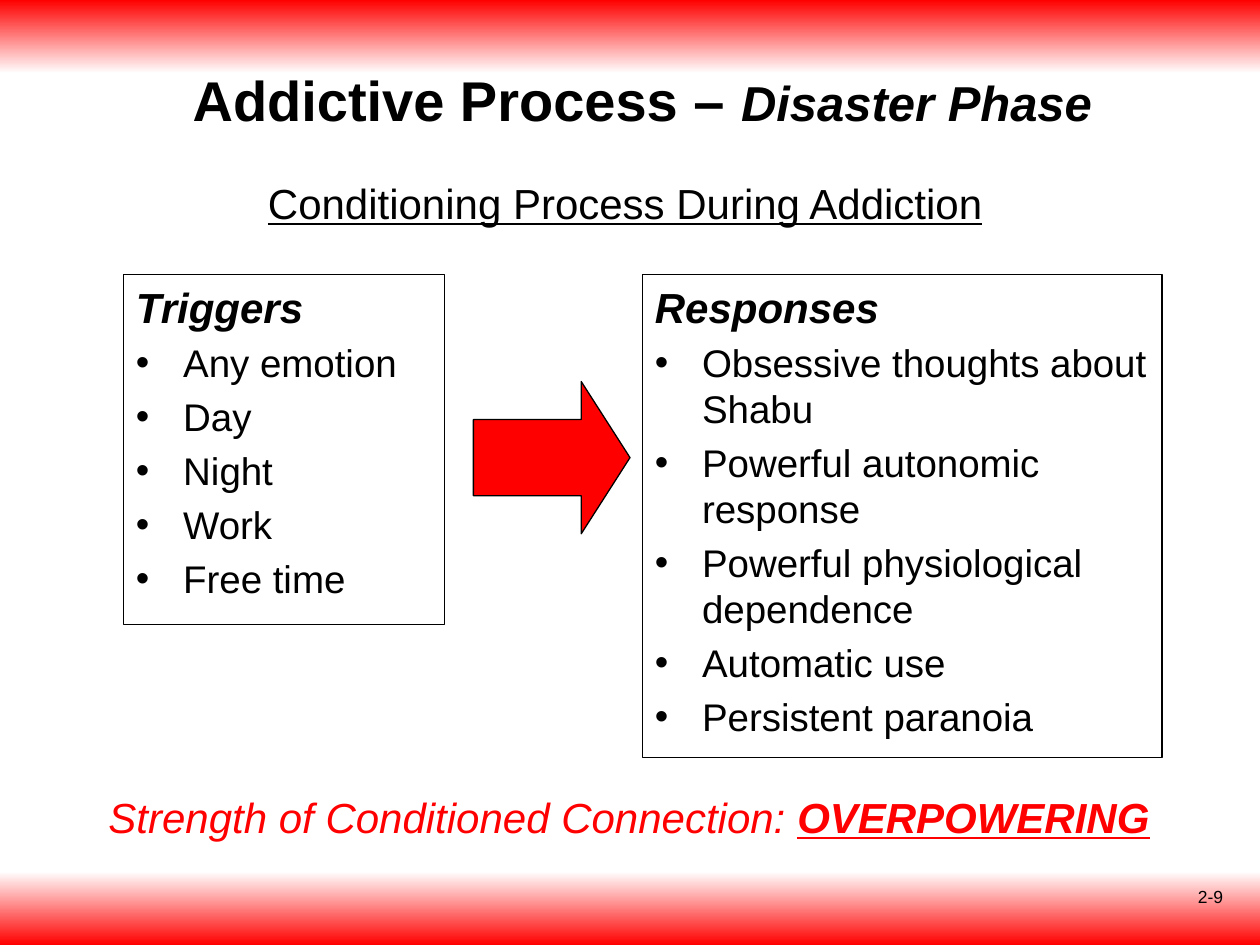
"""Build the Disaster Phase slide of the addictive process deck."""
from lxml.etree import SubElement
from pptx import Presentation
from pptx.dml.color import RGBColor
from pptx.enum.shapes import MSO_SHAPE
from pptx.enum.text import MSO_ANCHOR, MSO_AUTO_SIZE, PP_ALIGN
from pptx.oxml.ns import qn
from pptx.util import Pt

RED = RGBColor(0xFF, 0x00, 0x00)
BLACK = RGBColor(0x00, 0x00, 0x00)
WHITE = RGBColor(0xFF, 0xFF, 0xFF)


class SlideBuilder:
    """Hold the text style and the current slide."""

    font = {"name": "Arial", "size": 24, "bold": False, "italic": False,
            "underline": False, "color": BLACK}
    hanging = 27

    def __init__(self, deck):
        self.slide = deck.slides.add_slide(deck.slide_layouts[3])
        self.title_box, self.left_box, self.right_box = self.slide.placeholders

    def place(self, box, bounds):
        names = ("left", "top", "width", "height")
        for name, value in zip(names, bounds):
            setattr(box, name, Pt(value))

    def span(self, para, text, **changes):
        style = {**self.font, **changes}
        span = para.add_run()
        span.text = text
        span.font.color.rgb = style.pop("color")
        style["size"] = Pt(style["size"])
        for name, value in style.items():
            setattr(span.font, name, value)

    def outline(self, box):
        box.line.color.rgb = BLACK
        box.line.width = Pt(0.75)

    def band(self, top, colors):
        box = self.slide.shapes.add_shape(
            MSO_SHAPE.RECTANGLE, Pt(0), Pt(top), Pt(720), Pt(42))
        box.shadow.inherit = False
        box.line.fill.background()
        box.fill.gradient()
        box.fill.gradient_angle = 270
        for stop, color in zip(box.fill.gradient_stops, colors):
            stop.color.rgb = color

    def arrow(self, bounds):
        box = self.slide.shapes.add_shape(MSO_SHAPE.RIGHT_ARROW, *map(Pt, bounds))
        box.shadow.inherit = False
        box.adjustments[0], box.adjustments[1] = 0.5, 0.32
        box.fill.solid()
        box.fill.fore_color.rgb = RED
        self.outline(box)

    def title(self, bounds, spans):
        self.place(self.title_box, bounds)
        self.fill_text(self.title_box, spans, PP_ALIGN.CENTER)

    def text(self, bounds, spans, alignment=PP_ALIGN.LEFT, **frame):
        box = self.slide.shapes.add_textbox(*map(Pt, bounds))
        self.fill_text(box, spans, alignment, **frame)

    def fill_text(self, box, spans, alignment, **frame):
        settings = {"word_wrap": True, "auto_size": MSO_AUTO_SIZE.NONE, **frame}
        for name, value in settings.items():
            setattr(box.text_frame, name, value)
        para = box.text_frame.paragraphs[0]
        para.alignment = alignment
        for text, changes in spans:
            self.span(para, text, **changes)

    def panel(self, box, bounds, heading, items):
        self.place(box, bounds)
        self.outline(box)
        self.fill_text(box, [(heading, {"bold": True, "italic": True})], PP_ALIGN.LEFT)
        self.bullet(box.text_frame.paragraphs[0], 0, "buNone")
        for item in items:
            para = box.text_frame.add_paragraph()
            self.bullet(para, self.hanging, "buChar", char="•")
            self.span(para, item, size=22)

    def bullet(self, para, indent, kind, **attributes):
        properties = para._p.get_or_add_pPr()
        properties.set("marL", str(Pt(indent)))
        properties.set("indent", str(-Pt(indent)))
        SubElement(properties, qn(f"a:{kind}"), **attributes)


def main():
    deck = Presentation()
    deck.slide_width, deck.slide_height = Pt(720), Pt(540)
    page = SlideBuilder(deck)
    page.band(498, (WHITE, RED))
    page.band(0, (RED, WHITE))
    page.title((51, 31, 632, 51), [
        ("Addictive Process – ", {"size": 32, "bold": True}),
        ("Disaster Phase", {"size": 28, "bold": True, "italic": True})])
    page.text((146, 98, 428, 36),
              [("Conditioning Process During Addiction", {"underline": True})],
              word_wrap=False)
    page.panel(page.left_box, (70.5, 157, 183.5, 200), "Triggers",
               ["Any emotion", "Day", "Night", "Work", "Free time"])
    page.panel(page.right_box, (367, 157, 297, 276), "Responses",
               ["Obsessive thoughts about Shabu", "Powerful autonomic response",
                "Powerful physiological dependence", "Automatic use",
                "Persistent paranoia"])
    page.arrow((270.5, 218, 89.5, 87))
    page.text((44, 441, 631, 51), [
        ("Strength of Conditioned Connection: ", {"color": RED, "italic": True}),
        ("OVERPOWERING", {"color": RED, "bold": True, "italic": True,
                          "underline": True})],
        PP_ALIGN.CENTER, vertical_anchor=MSO_ANCHOR.MIDDLE)
    page.text((538, 503, 168, 37), [("2-9", {"size": 10})], PP_ALIGN.RIGHT)
    deck.save("out.pptx")


if __name__ == "__main__":
    main()
